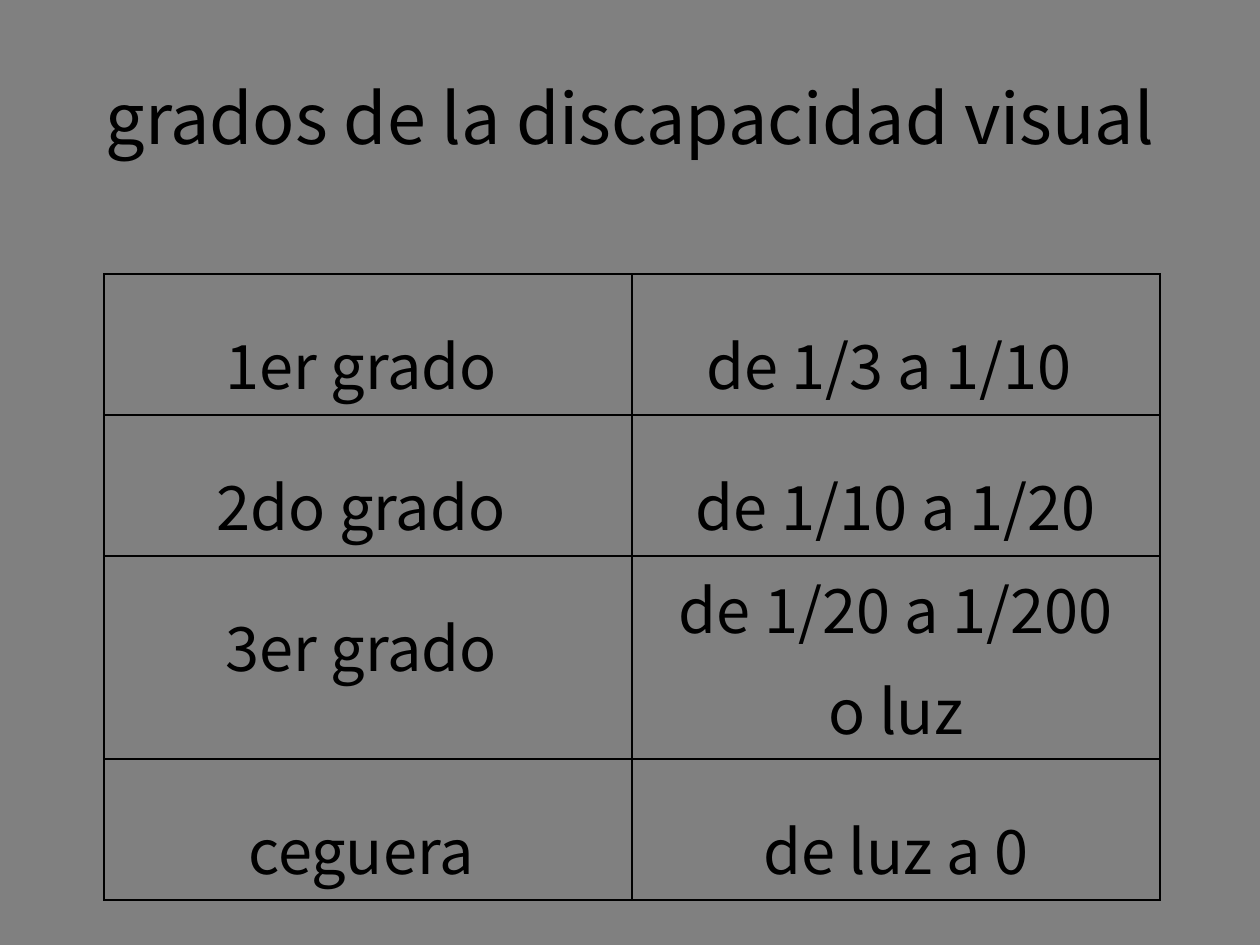
import pptx
import pptx.dml.color
import pptx.enum.text
import pptx.oxml
import pptx.oxml.ns
import pptx.util
from dataclasses import dataclass

PX = 914400 / 126


def px(n):
    return pptx.util.Emu(round(n * PX))


@dataclass(frozen=True)
class Theme:
    font: str = "Noto Sans CJK KR"
    background: str = "808080"
    ink: str = "000000"
    title_size: int = 40
    cell_size: int = 35
    paragraph_gap: int = 7
    border: int = 1


class Deck:
    def __init__(self, prs, theme):
        self.theme = theme
        self.slide = prs.slides.add_slide(prs.slide_layouts[5])
        fill = self.slide.background.fill
        fill.solid()
        fill.fore_color.rgb = pptx.dml.color.RGBColor.from_string(theme.background)

    def format_text(self, tf, size):
        for i, p in enumerate(tf.paragraphs):
            p.alignment = pptx.enum.text.PP_ALIGN.CENTER
            p.space_before = pptx.util.Pt(self.theme.paragraph_gap if i else 0)
            for r in p.runs:
                r.font.name = self.theme.font
                r.font.size = pptx.util.Pt(size)
                r.font.color.rgb = pptx.dml.color.RGBColor.from_string(self.theme.ink)

    def title(self, text, left, top, width, height):
        sp = self.slide.shapes.title
        sp.left, sp.top, sp.width, sp.height = map(px, (left, top, width, height))
        tf = sp.text_frame
        tf.text = text
        tf.word_wrap = True
        tf.auto_size = pptx.enum.text.MSO_AUTO_SIZE.NONE
        tf.vertical_anchor = pptx.enum.text.MSO_ANCHOR.MIDDLE
        self.format_text(tf, self.theme.title_size)

    def cell_borders(self, cell):
        tcPr = cell._tc.get_or_add_tcPr()
        for i, side in enumerate("LRTB"):
            ln = pptx.oxml.parse_xml(
                f'<a:ln{side} {pptx.oxml.ns.nsdecls("a")} w="{pptx.util.Pt(self.theme.border)}">'
                f'<a:solidFill><a:srgbClr val="{self.theme.ink}"/></a:solidFill></a:ln{side}>')
            tcPr.insert(i, ln)

    def table(self, rows, left, top, col_width, row_heights, top_margin, tight_margin):
        cols = len(rows[0])
        frame = self.slide.shapes.add_table(
            len(rows), cols, px(left), px(top), px(cols * col_width), px(sum(row_heights)))
        table = frame.table
        table.first_row = table.horz_banding = False
        for column in table.columns:
            column.width = px(col_width)
        for row, height, texts in zip(table.rows, row_heights, rows):
            row.height = px(height)
            for cell, text in zip(row.cells, texts):
                cell.text_frame.text = text
                cell.margin_top = px(tight_margin if "\n" in text else top_margin)
                cell.fill.background()
                self.cell_borders(cell)
                self.format_text(cell.text_frame, self.theme.cell_size)


def main():
    prs = pptx.Presentation()
    prs.slide_width, prs.slide_height = px(1260), px(945)
    deck = Deck(prs, Theme())
    deck.title("grados de la discapacidad visual", 63, 38, 1134, 158)
    grades = [
        ("1er grado ", "de 1/3 a 1/10 "),
        ("2do grado ", "de 1/10 a 1/20"),
        ("3er grado ", "de 1/20 a 1/200\no luz"),
        ("ceguera ", "de luz a 0"),
    ]
    deck.table(grades, left=104, top=274, col_width=528,
               row_heights=(141, 141, 203, 141), top_margin=44, tight_margin=6)
    prs.save("out.pptx")


if __name__ == "__main__":
    main()
